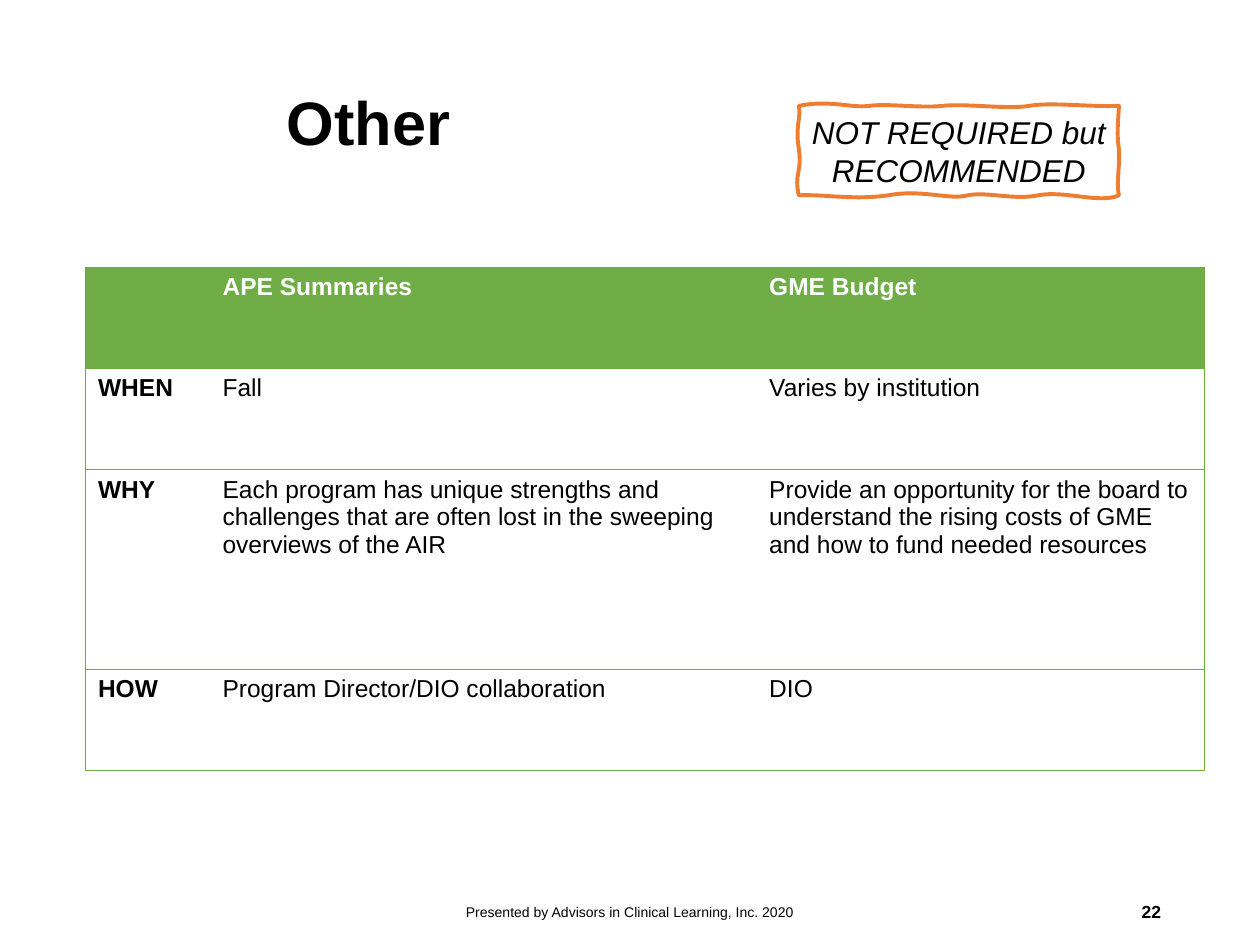
import pptx
import pptx.dml.color
import pptx.enum.text
import pptx.oxml
import pptx.oxml.ns
import pptx.util

Pt = pptx.util.Pt
ALIGN = pptx.enum.text.PP_ALIGN
ANCHOR = pptx.enum.text.MSO_ANCHOR
NS = pptx.oxml.ns.nsdecls("a")

BLACK, WHITE = "000000", "FFFFFF"
GREEN, RULE_GREEN, ORANGE = "70AD47", "6DAC43", "ED7D31"
PATH_UNIT = Pt(0.01)


def color(hex_value):
    return pptx.dml.color.RGBColor.from_string(hex_value)


def write(frame, text, size=14, ink=BLACK, bold=False, italic=False,
          align=ALIGN.LEFT, anchor=ANCHOR.TOP, margins=(7.2, 3.6), spacing=None):
    """Put one formatted paragraph into a text frame."""
    frame.word_wrap = True
    frame.auto_size = pptx.enum.text.MSO_AUTO_SIZE.NONE
    frame.vertical_anchor = anchor
    frame.margin_left = frame.margin_right = Pt(margins[0])
    frame.margin_top = frame.margin_bottom = Pt(margins[1])
    paragraph = frame.paragraphs[0]
    paragraph.text = text
    paragraph.alignment = align
    if spacing:
        paragraph.line_spacing = spacing
    font = paragraph.font
    font.name, font.size = "Arial", Pt(size)
    font.bold, font.italic = bold, italic
    font.color.rgb = color(ink)


class SlideBuilder:
    def __init__(self, slide):
        self.slide = slide

    def title(self, text, box, **style):
        heading = self.slide.shapes.title
        heading.left, heading.top, heading.width, heading.height = map(Pt, box)
        write(heading.text_frame, text, **style)

    def label(self, text, box, **style):
        holder = self.slide.shapes.add_textbox(*map(Pt, box))
        write(holder.text_frame, text, **style)

    def wavy_box(self, text, start, curves, line, **style):
        to_units = lambda x, y: (round(x * 100), round(y * 100))
        builder = self.slide.shapes.build_freeform(*to_units(*start), scale=PATH_UNIT)
        builder.add_line_segments([to_units(*curve[4:]) for curve in curves], close=True)
        callout = builder.convert_to_shape()
        # Bend each straight segment into a cubic curve
        left, top = callout.left / PATH_UNIT, callout.top / PATH_UNIT
        segments = callout._element.findall(".//" + pptx.oxml.ns.qn("a:lnTo"))
        for segment, curve in zip(segments, curves):
            points = "".join(
                f'<a:pt x="{round(x * 100 - left)}" y="{round(y * 100 - top)}"/>'
                for x, y in zip(curve[::2], curve[1::2]))
            segment.getparent().replace(segment, pptx.oxml.parse_xml(
                f"<a:cubicBezTo {NS}>{points}</a:cubicBezTo>"))
        callout.shadow.inherit = False
        callout.fill.background()
        callout.line.color.rgb = color(line)
        callout.line.width = Pt(2.25)
        write(callout.text_frame, text, **style)

    def border(self, cell, side, hex_value=None):
        paint = (f'<a:solidFill><a:srgbClr val="{hex_value}"/></a:solidFill>'
                 if hex_value else "<a:noFill/>")
        cell._tc.get_or_add_tcPr().append(pptx.oxml.parse_xml(
            f'<a:ln{side} {NS} w="{Pt(0.75)}">{paint}</a:ln{side}>'))

    def table(self, rows, left, top, widths, heights):
        grid = self.slide.shapes.add_table(
            len(rows), len(widths), Pt(left), Pt(top),
            Pt(sum(widths)), Pt(sum(heights))).table
        grid.horz_banding = False
        for column, width in zip(grid.columns, widths):
            column.width = Pt(width)
        last = len(widths) - 1
        for r, texts in enumerate(rows):
            grid.rows[r].height = Pt(heights[r])
            for c, text in enumerate(texts):
                cell = grid.cell(r, c)
                # Outer frame and row rules only
                self.border(cell, "L", RULE_GREEN if c == 0 else None)
                self.border(cell, "R", RULE_GREEN if c == last else None)
                self.border(cell, "T", RULE_GREEN)
                self.border(cell, "B", RULE_GREEN)
                if r == 0:
                    cell.fill.solid()
                    cell.fill.fore_color.rgb = color(GREEN)
                else:
                    cell.fill.background()
                if text:
                    write(cell.text_frame, text, ink=BLACK if r else WHITE,
                          bold=r == 0 or c == 0)


def main():
    deck = pptx.Presentation()
    deck.slide_width, deck.slide_height = Pt(720), Pt(540)
    page = SlideBuilder(deck.slides.add_slide(deck.slide_layouts[5]))

    # Heading
    page.title("Other", (156.7, 19.4, 514, 104.4), size=35, bold=True,
               anchor=ANCHOR.MIDDLE, margins=(7.2, 7.2), spacing=0.9)

    # Hand-drawn callout: top, right, bottom and left edges
    wave = [
        (474.5, 56.9, 486, 61.9, 496.8, 60.5), (507.6, 59, 525.6, 61.9, 538.6, 60.5),
        (551.5, 59, 576, 62.6, 588.2, 60.5), (599.8, 58.3, 622.8, 61.2, 639.4, 60.5),
        (639.4, 65.5, 637.9, 75.6, 639.4, 85), (640.1, 94.3, 637.9, 104.4, 639.4, 111.6),
        (628.6, 116.6, 608.4, 108.7, 593.3, 111.6), (578.9, 114.5, 564.5, 109.4, 553, 111.6),
        (542.2, 114.5, 527.8, 108, 507.6, 111.6), (487.4, 114.5, 470.9, 110.9, 456.5, 111.6),
        (453.6, 99.4, 458.6, 97.9, 456.5, 85), (454.3, 72, 457.9, 67.7, 456.5, 60.5)]
    page.wavy_box("NOT REQUIRED but RECOMMENDED", (456.5, 60.5), wave, ORANGE,
                  size=18, italic=True, align=ALIGN.CENTER,
                  anchor=ANCHOR.MIDDLE, margins=(5, 3.6))

    # When, why and how
    page.table([
        ("", "APE Summaries", "GME Budget"),
        ("WHEN", "Fall", "Varies by institution"),
        ("WHY",
         "Each program has unique strengths and challenges that are often lost "
         "in the sweeping overviews of the AIR",
         "Provide an opportunity for the board to understand the rising costs "
         "of GME and how to fund needed resources"),
        ("HOW", "Program Director/DIO collaboration", "DIO"),
    ], 48.8, 152.7, (71.2, 312.4, 255.8), (57.8, 57.8, 114.2, 57.8))

    # Footer and page number
    page.label("Presented by Advisors in Clinical Learning, Inc. 2020",
               (238.5, 506.6, 243, 28.8), size=8,
               align=ALIGN.CENTER, anchor=ANCHOR.MIDDLE)
    page.label("22", (508.5, 506.6, 162, 28.8), size=10, bold=True,
               align=ALIGN.RIGHT, anchor=ANCHOR.MIDDLE)

    deck.save("out.pptx")


if __name__ == "__main__":
    main()
